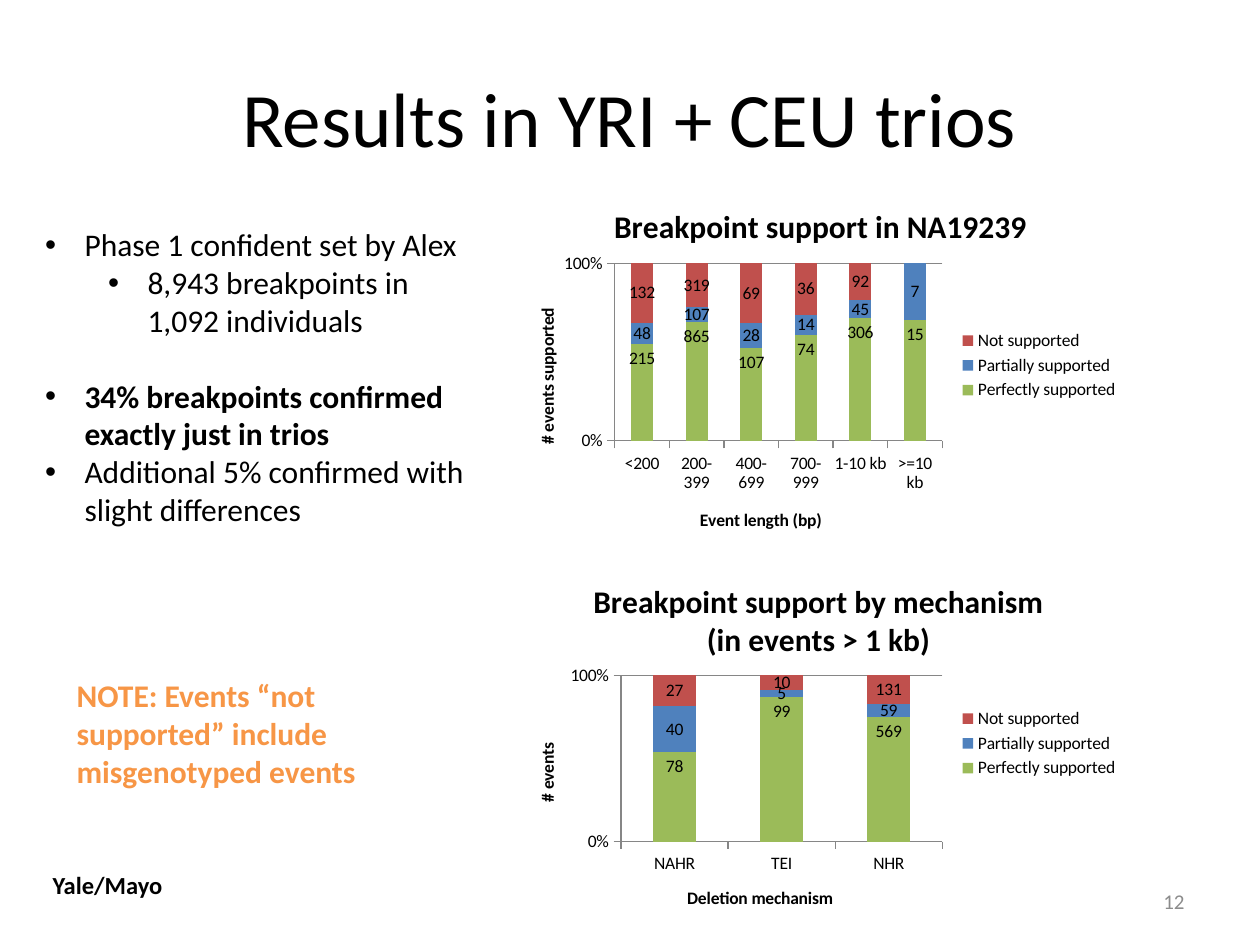
from lxml import etree
from pptx import Presentation
from pptx.chart.data import CategoryChartData
from pptx.dml.color import RGBColor
from pptx.enum.chart import XL_CHART_TYPE, XL_LABEL_POSITION, XL_LEGEND_POSITION, XL_TICK_MARK
from pptx.enum.text import MSO_ANCHOR, PP_ALIGN
from pptx.oxml.ns import qn
from pptx.util import Pt

STACKED = XL_CHART_TYPE.COLUMN_STACKED_100
INSIDE_END, CENTER = XL_LABEL_POSITION.INSIDE_END, XL_LABEL_POSITION.CENTER
LEGEND_RIGHT = XL_LEGEND_POSITION.RIGHT
TICK_OUT, TICK_NONE = XL_TICK_MARK.OUTSIDE, XL_TICK_MARK.NONE
MIDDLE, TOP = MSO_ANCHOR.MIDDLE, MSO_ANCHOR.TOP
LEFT, CENTERED, RIGHT = PP_ALIGN.LEFT, PP_ALIGN.CENTER, PP_ALIGN.RIGHT

THEME = {
    "font": "Calibri",
    "text": "000000", "note": "F79646", "number": "8C8C8C", "axis": "868686",
    "series": ["9BBB59", "4F81BD", "C0504D"],
    "title": 44, "body": 18, "label": 14, "small": 12, "chart": 10,
}

# Content: bullets hold text, indent, bold and space before
BULLETS = [
    ("Phase 1 confident set by Alex", 22.5, False, 0),
    ("8,943 breakpoints in 1,092 individuals", 58.5, False, 0),
    ("34% breakpoints confirmed exactly just in trios", 22.5, True, 21.6),
    ("Additional 5% confirmed with slight differences", 22.5, False, 0),
]
HANGING = 22.5

SERIES = ["Perfectly supported", "Partially supported", "Not supported"]
# Layout entries are fractions of the chart's width and height
CHARTS = [
    {
        "title": ["Breakpoint support in NA19239"],
        "category_title": "Event length (bp)", "value_title": "# events supported",
        "categories": ["<200", "200-399", "400-699", "700-999", "1-10 kb", ">=10 kb"],
        "values": [(215, 865, 107, 74, 306, 15), (48, 107, 28, 14, 45, 7),
                   (132, 319, 69, 36, 92, 0)],
        "title_at": (0.17, 0.06), "category_at": (0.31, 0.87), "value_at": (0.05, 0.34),
        "plot_at": (0.18, 0.23, 0.52, 0.47),
    },
    {
        "title": ["Breakpoint support by mechanism", "(in events > 1 kb)"],
        "category_title": "Deletion mechanism", "value_title": "# events",
        "categories": ["NAHR", "TEI", "NHR"],
        "values": [(78, 99, 569), (40, 5, 59), (27, 10, 131)],
        "title_at": (0.14, 0.06), "category_at": (0.29, 0.87), "value_at": (0.05, 0.49),
        "plot_at": (0.19, 0.32, 0.51, 0.44),
    },
]
CHART_LEFT, CHART_TOP, CHART_WIDTH, CHART_HEIGHT = 286.5, 100.8, 360, 216


def style(font, size, color=THEME["text"], bold=False):
    font.name, font.size, font.bold = THEME["font"], Pt(size), bold
    font.color.rgb = RGBColor.from_string(color)


def add_bullet(para, indent):
    properties = para._p.get_or_add_pPr()
    properties.set("marL", str(Pt(indent)))
    properties.set("indent", str(-Pt(HANGING)))
    etree.SubElement(properties, qn("a:buFont")).set("typeface", "Arial")
    etree.SubElement(properties, qn("a:buChar")).set("char", "•")


def add_text(page, items, left, top, width, height, size, color=THEME["text"],
             bold=False, align=LEFT, anchor=TOP):
    """Items are plain strings or bullet tuples."""
    frame = page.shapes.add_textbox(Pt(left), Pt(top), Pt(width), Pt(height)).text_frame
    frame.word_wrap, frame.vertical_anchor = True, anchor
    for index, item in enumerate(items):
        para = frame.paragraphs[0] if index == 0 else frame.add_paragraph()
        para.alignment = align
        text, heavy = item, bold
        if isinstance(item, tuple):
            text, indent, heavy, space = item
            para.space_before = Pt(space)
            add_bullet(para, indent)
        span = para.add_run()
        span.text = text
        style(span.font, size, color, heavy)


def place(element, index, fractions, inner=False):
    """Give a chart part a manual layout."""
    for old in element.findall(qn("c:layout")):
        element.remove(old)
    layout = etree.Element(qn("c:layout"))
    element.insert(index, layout)
    manual = etree.SubElement(layout, qn("c:manualLayout"))
    settings = [("layoutTarget", "inner")] if inner else []
    settings += [("xMode", "edge"), ("yMode", "edge")]
    settings += zip("xywh", fractions)
    for name, value in settings:
        etree.SubElement(manual, qn("c:" + name)).set("val", str(value))


def write_title(title, lines, size, position):
    frame = title.text_frame
    for index, line in enumerate(lines):
        para = frame.paragraphs[0] if index == 0 else frame.add_paragraph()
        span = para.add_run()
        span.text = line
        style(span.font, size, bold=True)
    place(title._element, 1, position)


def add_chart(page, content, top):
    data = CategoryChartData()
    data.categories = content["categories"]
    for name, values in zip(SERIES, content["values"]):
        data.add_series(name, values)
    chart = page.shapes.add_chart(STACKED, Pt(CHART_LEFT), Pt(top), Pt(CHART_WIDTH),
                                  Pt(CHART_HEIGHT), data).chart
    style(chart.font, THEME["chart"])
    chart.has_title = True
    write_title(chart.chart_title, content["title"], THEME["body"], content["title_at"])
    chart.has_legend = True
    chart.legend.position, chart.legend.include_in_layout = LEGEND_RIGHT, False

    # Axes
    for axis, part in ((chart.category_axis, "category"), (chart.value_axis, "value")):
        write_title(axis.axis_title, [content[part + "_title"]], THEME["chart"],
                    content[part + "_at"])
        axis.major_tick_mark, axis.minor_tick_mark = TICK_OUT, TICK_NONE
        axis.format.line.color.rgb = RGBColor.from_string(THEME["axis"])
    values = chart.value_axis
    values.minimum_scale, values.maximum_scale, values.major_unit = 0, 1, 1
    values.major_gridlines.format.line.color.rgb = RGBColor.from_string(THEME["axis"])
    values.tick_labels.number_format = "0%"
    values.tick_labels.number_format_is_linked = False

    # Columns and their labels; the format leaves zeros unlabelled
    plot = chart.plots[0]
    plot.gap_width, plot.overlap, plot.vary_by_categories = 150, 100, False
    for index, series in enumerate(plot.series):
        series.format.fill.solid()
        series.format.fill.fore_color.rgb = RGBColor.from_string(THEME["series"][index])
        labels = series.data_labels
        labels.show_value = True
        labels.position = INSIDE_END if index == 0 else CENTER
        labels.number_format, labels.number_format_is_linked = "0;;", False
        style(labels.font, THEME["chart"])
    place(chart._chartSpace.find(".//" + qn("c:plotArea")), 0, content["plot_at"], inner=True)


def main():
    deck = Presentation()
    deck.slide_width, deck.slide_height = Pt(720), Pt(540)
    page = deck.slides.add_slide(deck.slide_layouts[6])

    # Heading
    add_text(page, ["Results in YRI + CEU trios"], 36, 21.6, 648, 90, THEME["title"],
             align=CENTERED, anchor=MIDDLE)
    # Charts, one below the other
    for index, content in enumerate(CHARTS):
        add_chart(page, content, CHART_TOP + index * CHART_HEIGHT)
    # Findings and note
    add_text(page, BULLETS, 18.7, 125.3, 255.6, 181.4, THEME["body"])
    add_text(page, ["NOTE: Events “not supported” include misgenotyped events"],
             36.7, 383, 237.6, 72.7, THEME["body"], color=THEME["note"], bold=True)
    # Footer
    add_text(page, ["12"], 516.2, 500.4, 167.8, 28.8, THEME["small"],
             color=THEME["number"], align=RIGHT, anchor=MIDDLE)
    add_text(page, ["Yale/Mayo"], 23, 493.9, 85, 24.5, THEME["label"], bold=True)
    deck.save("out.pptx")


if __name__ == "__main__":
    main()
